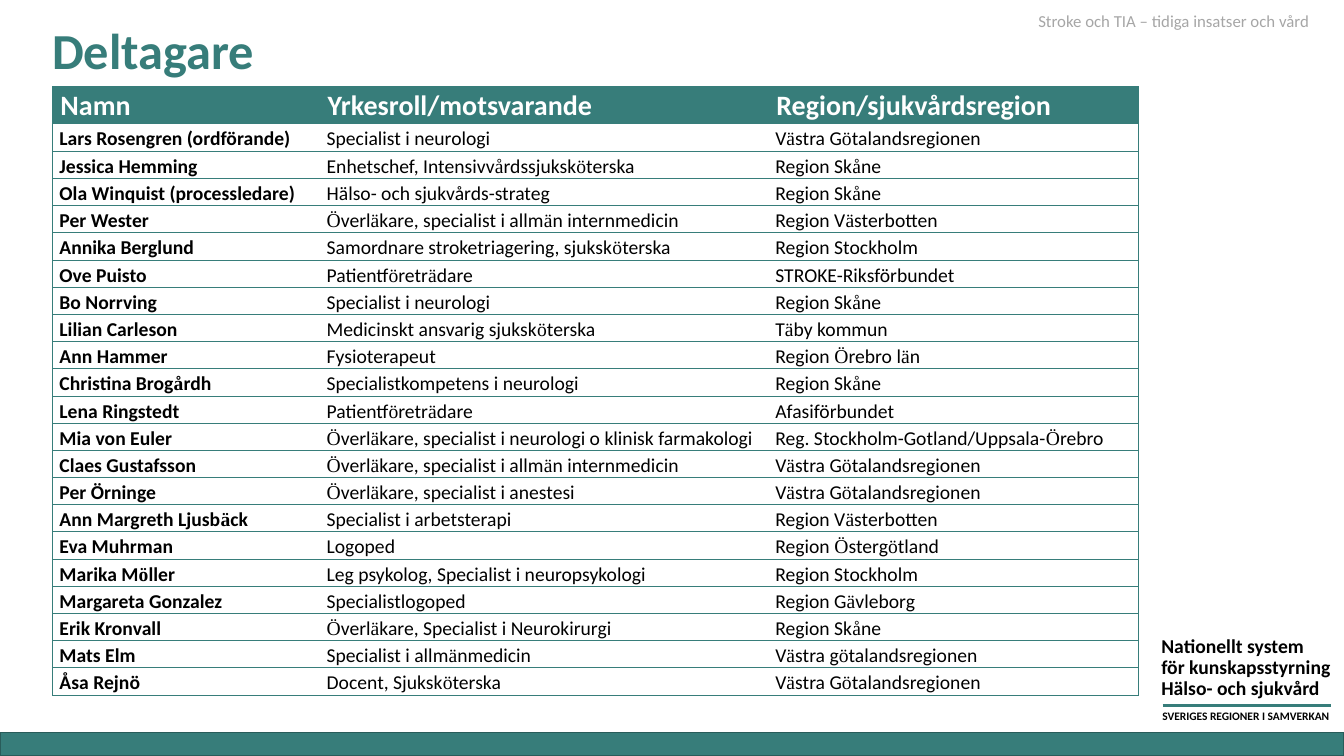
"""Build the participant list slide."""
import itertools
from dataclasses import dataclass

import lxml.etree
import pptx
import pptx.dml.color
import pptx.enum.shapes
import pptx.enum.text
import pptx.oxml.ns
import pptx.util

Inches = pptx.util.Inches
Pt = pptx.util.Pt


@dataclass(frozen=True)
class Theme:
    """Colours, fonts and type sizes of the slide."""
    teal: str = "377D7A"
    dark_teal: str = "295C5A"
    black: str = "000000"
    white: str = "FFFFFF"
    grey: str = "A6A6A6"
    font: str = "Calibri"
    accent_font: str = "Times New Roman"
    title: float = 36
    header: float = 20
    body: float = 14
    topic: float = 12
    tagline: float = 8.2


THEME = Theme()
HEADINGS = ("Namn", "Yrkesroll/motsvarande", "Region/sjukvårdsregion")
PARTICIPANTS = (
    ("Lars Rosengren (ordförande)", "Specialist i neurologi", "Västra Götalandsregionen"),
    ("Jessica Hemming", "Enhetschef, Intensivvårdssjuksköterska", "Region Skåne"),
    ("Ola Winquist (processledare)", "Hälso- och sjukvårds-strateg", "Region Skåne"),
    ("Per Wester", "Överläkare, specialist i allmän internmedicin", "Region Västerbotten"),
    ("Annika Berglund", "Samordnare stroketriagering, sjuksköterska", "Region Stockholm"),
    ("Ove Puisto", "Patientföreträdare", "STROKE-Riksförbundet"),
    ("Bo Norrving", "Specialist i neurologi", "Region Skåne"),
    ("Lilian Carleson", "Medicinskt ansvarig sjuksköterska", "Täby kommun"),
    ("Ann Hammer", "Fysioterapeut", "Region Örebro län"),
    ("Christina Brogårdh", "Specialistkompetens i neurologi", "Region Skåne"),
    ("Lena Ringstedt", "Patientföreträdare", "Afasiförbundet"),
    ("Mia von Euler", "Överläkare, specialist i neurologi o klinisk farmakologi",
     "Reg. Stockholm-Gotland/Uppsala-Örebro"),
    ("Claes Gustafsson", "Överläkare, specialist i allmän internmedicin",
     "Västra Götalandsregionen"),
    ("Per Örninge", "Överläkare, specialist i anestesi", "Västra Götalandsregionen"),
    ("Ann Margreth Ljusbäck", "Specialist i arbetsterapi", "Region Västerbotten"),
    ("Eva Muhrman", "Logoped", "Region Östergötland"),
    ("Marika Möller", "Leg psykolog, Specialist i neuropsykologi", "Region Stockholm"),
    ("Margareta Gonzalez", "Specialistlogoped", "Region Gävleborg"),
    ("Erik Kronvall", "Överläkare, Specialist i Neurokirurgi", "Region Skåne"),
    ("Mats Elm", "Specialist i allmänmedicin", "Västra götalandsregionen"),
    ("Åsa Rejnö", "Docent, Sjuksköterska", "Västra Götalandsregionen"),
)
SINGLE_FONT = {"Lars Rosengren (ordförande)", "Hälso- och sjukvårds-strateg",
               "STROKE-Riksförbundet", "Afasiförbundet", "Per Örninge", "Åsa Rejnö"}


def rgb(colour):
    """Turn a hex string into a colour."""
    return pptx.dml.color.RGBColor.from_string(colour)


def style_font(font, size, colour, bold=False, name=THEME.font):
    """Set the look of a font."""
    font.size, font.bold, font.name = Pt(size), bold, name
    font.color.rgb = rgb(colour)


def add_label(slide, box, text, size, colour, bold=False, spacing=None, anchor="TOP"):
    """Place a text box, one paragraph for each line of text."""
    frame = slide.shapes.add_textbox(*map(Inches, box)).text_frame
    frame.word_wrap = True
    frame.vertical_anchor = pptx.enum.text.MSO_ANCHOR[anchor]
    frame.text = text
    for paragraph in frame.paragraphs:
        paragraph.line_spacing = spacing
        style_font(paragraph.runs[0].font, size, colour, bold)


def add_footer_bar(slide, box):
    """Draw the teal bar along the bottom."""
    bar = slide.shapes.add_shape(pptx.enum.shapes.MSO_SHAPE.RECTANGLE, *map(Inches, box))
    bar.shadow.inherit = False
    bar.fill.solid()
    bar.fill.fore_color.rgb = rgb(THEME.teal)
    bar.line.color.rgb = rgb(THEME.dark_teal)
    bar.line.width = Pt(1)


def add_sender(slide, box):
    """Place the sender's name, its rule and the tagline."""
    left, top, width, height = box
    add_label(slide, (left, top, width, 0.73),
              "Nationellt system\nför kunskapsstyrning\nHälso- och sjukvård",
              THEME.body, THEME.black, True, Pt(14.8))
    rule_y = Inches(top + 0.73)
    rule = slide.shapes.add_connector(
        pptx.enum.shapes.MSO_CONNECTOR.STRAIGHT,
        Inches(left + 0.11), rule_y, Inches(left + 1.78), rule_y)
    rule.line.color.rgb = rgb(THEME.teal)
    rule.line.width = Pt(2.5)
    lxml.etree.SubElement(rule._element.spPr, pptx.oxml.ns.qn("a:effectLst"))
    add_label(slide, (left + 0.01, top + height - 0.24, width, 0.24),
              "SVERIGES REGIONER I SAMVERKAN", THEME.tagline, THEME.black, True)


def set_borders(cell, visible):
    """Draw the given sides of a cell and hide the others."""
    properties = cell._tc.get_or_add_tcPr()
    for side in "LRTB":
        line = lxml.etree.SubElement(properties, pptx.oxml.ns.qn(f"a:ln{side}"), w=str(Pt(0.5)))
        if side in visible:
            fill = lxml.etree.SubElement(line, pptx.oxml.ns.qn("a:solidFill"))
            lxml.etree.SubElement(fill, pptx.oxml.ns.qn("a:srgbClr"), val=THEME.teal)
        else:
            lxml.etree.SubElement(line, pptx.oxml.ns.qn("a:noFill"))


def fill_cell(cell, text, is_header, column):
    """Write one cell, with its borders, fill and fonts."""
    set_borders(cell, "TB" + {0: "L", 2: "R"}.get(column, ""))
    cell.fill.solid()
    cell.fill.fore_color.rgb = rgb(THEME.teal if is_header else THEME.white)
    cell.margin_left = cell.margin_right = Inches(0.08 if is_header else 0.07)
    cell.margin_top = cell.margin_bottom = 0
    paragraph = cell.text_frame.paragraphs[0]
    paragraph.line_spacing = 1.06 if is_header else 1.15
    size, colour = (THEME.header, THEME.white) if is_header else (THEME.body, THEME.black)
    plain = is_header or text in SINGLE_FONT
    for accented, letters in itertools.groupby(text, lambda c: not plain and c in "åäöÅÄÖ"):
        run = paragraph.add_run()
        run.text = "".join(letters)
        style_font(run.font, size, colour, is_header or column == 0,
                   THEME.accent_font if accented else THEME.font)


def add_participants(slide, box):
    """Place the table of participants."""
    rows = (HEADINGS, *PARTICIPANTS)
    table = slide.shapes.add_table(len(rows), len(HEADINGS), *map(Inches, box)).table
    table.first_row = table.horz_banding = False
    for column, share in zip(table.columns, (2.65, 4.45, 3.67)):
        column.width = Inches(share)
    for index, values in enumerate(rows):
        table.rows[index].height = Inches({0: 0.36, 1: 0.28}.get(index, 0.27))
        for column, text in enumerate(values):
            fill_cell(table.cell(index, column), text, index == 0, column)


def build_slide(presentation):
    """Build the participant slide."""
    slide = presentation.slides.add_slide(presentation.slide_layouts[6])
    add_footer_bar(slide, (0, 7.27, 13.33, 0.23))
    add_sender(slide, (11.42, 6.27, 2.43, 0.96))
    add_label(slide, (0.42, 0.12, 11.5, 0.82), "Deltagare",
              THEME.title, THEME.teal, True, 0.9, "MIDDLE")
    add_participants(slide, (0.52, 0.86, 10.77, 6.1))
    add_label(slide, (10.2, 0.06, 3.13, 0.3), "Stroke och TIA – tidiga insatser och vård",
              THEME.topic, THEME.grey)


def main():
    """Create and save the presentation."""
    presentation = pptx.Presentation()
    presentation.slide_width = Inches(13.33)
    presentation.slide_height = Inches(7.5)
    build_slide(presentation)
    presentation.save("out.pptx")


if __name__ == "__main__":
    main()
